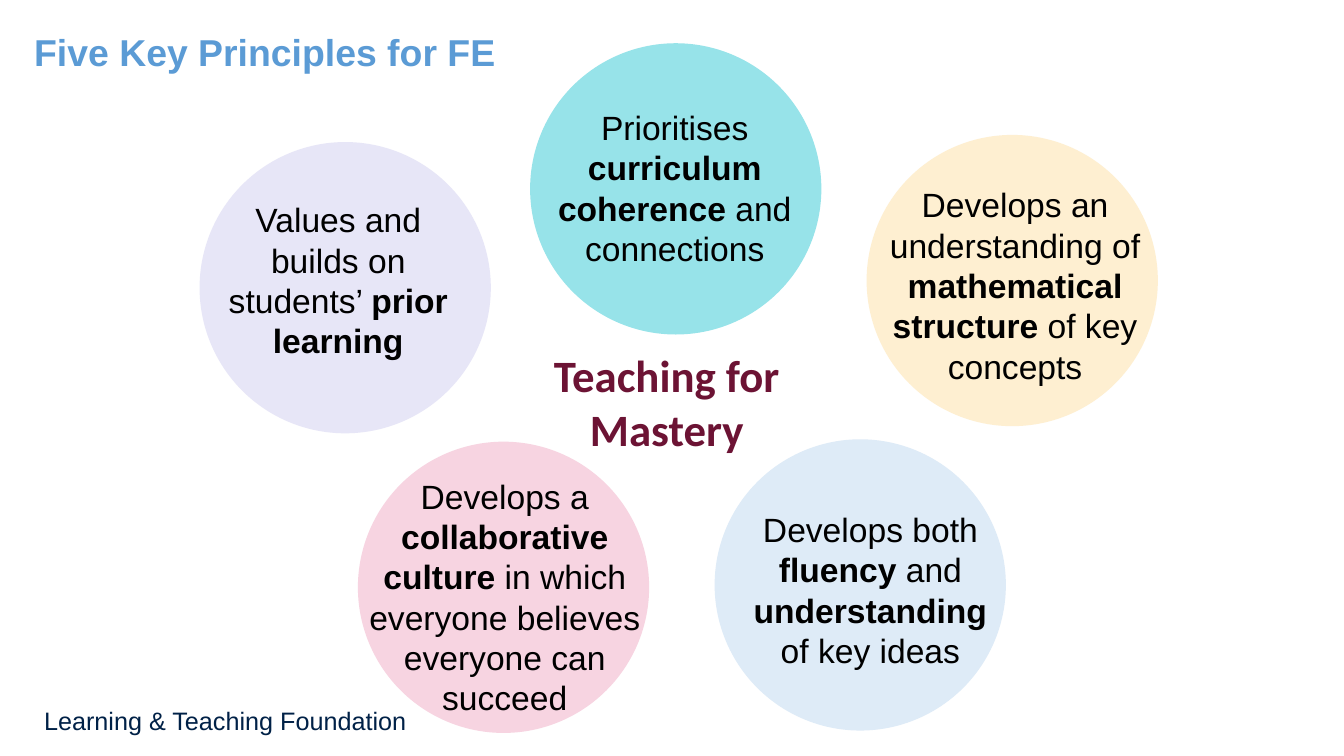
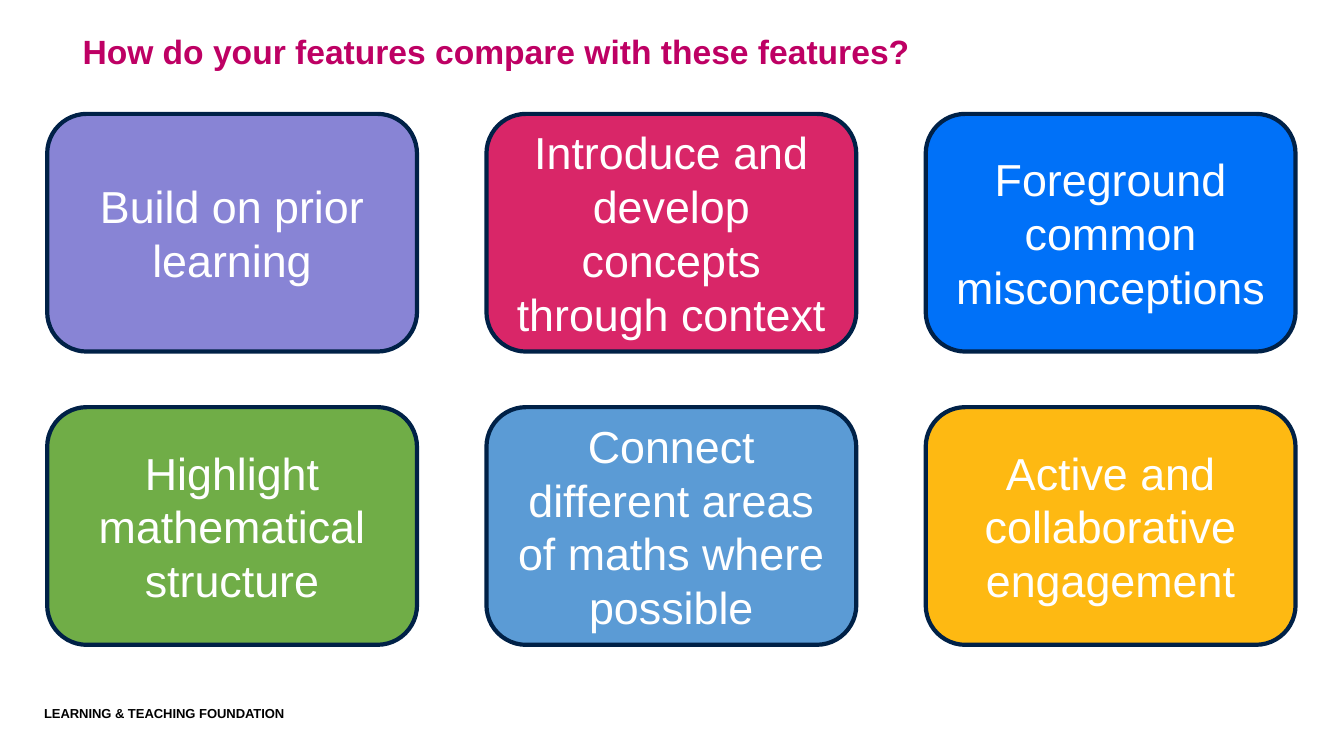
from pptx import Presentation
from pptx.dml.color import RGBColor
from pptx.enum import shapes, text
from pptx.util import Cm, Pt

# Shared colours and fonts
BLACK = RGBColor(0x00, 0x00, 0x00)
WHITE = RGBColor(0xFF, 0xFF, 0xFF)
NAVY = RGBColor(0x00, 0x21, 0x47)
BLUE = RGBColor(0x5B, 0x9B, 0xD5)
MAGENTA = RGBColor(0xBE, 0x00, 0x64)
MAROON = RGBColor(0x6C, 0x13, 0x34)
PALE_PINK = RGBColor(0xF7, 0xD4, 0xE1)
PALE_TEAL = RGBColor(0x97, 0xE3, 0xE9)
PALE_BLUE = RGBColor(0xDE, 0xEB, 0xF7)
PALE_YELLOW = RGBColor(0xFE, 0xEF, 0xD1)
PALE_LILAC = RGBColor(0xE7, 0xE6, 0xF7)
LILAC = RGBColor(0x88, 0x84, 0xD5)
RASPBERRY = RGBColor(0xD9, 0x26, 0x68)
BRIGHT_BLUE = RGBColor(0x00, 0x71, 0xF8)
GREEN = RGBColor(0x70, 0xAD, 0x47)
AMBER = RGBColor(0xFE, 0xB9, 0x12)
FONT = "Arial"
HEADING_FONT = "Calibri"
FOOTER = "Learning & Teaching Foundation"

# Principles: circle colour, circle (left, top), text box (left, top, width,
# height), wording with the bold parts between asterisks
DIAMETER = 7.34
PRINCIPLES = [
    (PALE_PINK, (9.02, 11.13), (9.02, 11.86, 7.4, 4.67),
     "Develops a *collaborative culture* in which everyone believes "
     "everyone can succeed"),
    (PALE_TEAL, (13.36, 1.09), (13.46, 2.57, 7.09, 3.3),
     "Prioritises *curriculum coherence* and connections"),
    (PALE_BLUE, (18.01, 11.07), (18.72, 12.7, 6.43, 4.57),
     "Develops both *fluency* and *understanding* of key ideas"),
    (PALE_YELLOW, (21.84, 3.4), (21.67, 4.52, 7.82, 4.75),
     "Develops an understanding of *mathematical structure* of key concepts"),
    (PALE_LILAC, (5.03, 3.58), (5.31, 4.9, 6.43, 3.53),
     "Values and builds on students’ *prior learning*"),
]

# Feature cards, row by row
CARD_COLUMNS = 3
CARD_LEFT, CARD_TOP = 1.19, 2.87
CARD_WIDTH, CARD_HEIGHT = 9.32, 5.99
CARD_STEP_X, CARD_STEP_Y = 11.07, 7.39
FEATURES = [
    (LILAC, "Build on prior learning"),
    (RASPBERRY, "Introduce and develop concepts through context"),
    (BRIGHT_BLUE, "Foreground common misconceptions"),
    (GREEN, "Highlight mathematical structure"),
    (BLUE, "Connect different areas of maths where possible"),
    (AMBER, "Active and collaborative engagement"),
]


def style(font, size, color, bold=False, name=FONT):
    font.name, font.size, font.bold = name, Pt(size), bold
    font.color.rgb = color


def add_rich_text(p, wording, size, color, name=FONT):
    """Fill a paragraph; parts between asterisks become bold."""
    for i, part in enumerate(wording.split("*")):
        if part:
            r = p.add_run()
            r.text = part
            style(r.font, size, color, i % 2 == 1, name)


def add_text(s, box, wording, size, color, name=FONT,
             align=text.PP_ALIGN.CENTER):
    tf = s.shapes.add_textbox(*map(Cm, box)).text_frame
    tf.word_wrap = True
    p = tf.paragraphs[0]
    p.alignment = align
    add_rich_text(p, wording, size, color, name)


def add_filled_shape(s, kind, box, fill):
    sp = s.shapes.add_shape(kind, *map(Cm, box))
    sp.shadow.inherit = False
    sp.fill.solid()
    sp.fill.fore_color.rgb = fill
    sp.line.fill.background()
    return sp


def add_card(s, box, fill, wording):
    sp = add_filled_shape(s, shapes.MSO_SHAPE.ROUNDED_RECTANGLE, box, fill)
    sp.line.color.rgb = NAVY
    sp.line.width = Pt(3)
    tf = sp.text_frame
    tf.word_wrap = True
    tf.vertical_anchor = text.MSO_ANCHOR.MIDDLE
    p = tf.paragraphs[0]
    p.alignment = text.PP_ALIGN.CENTER
    add_rich_text(p, wording, 32, WHITE)


def set_title(s, wording, left, top, size, color):
    sp = s.shapes.title
    sp.left, sp.top, sp.width, sp.height = map(Cm, (left, top, 31.24, 2.59))
    tf = sp.text_frame
    tf.text = wording
    tf.auto_size = text.MSO_AUTO_SIZE.NONE
    tf.word_wrap = True
    tf.vertical_anchor = text.MSO_ANCHOR.TOP
    tf.margin_left = tf.margin_right = tf.margin_top = tf.margin_bottom = 0
    p = tf.paragraphs[0]
    p.alignment = text.PP_ALIGN.LEFT
    p.line_spacing = Pt(26.7)
    style(p.runs[0].font, size, color, True)


def add_footer(s, wording, size, color):
    add_text(s, (0.86, 17.65, 28.47, 1.02), wording, size, color,
             align=text.PP_ALIGN.LEFT)


def add_principles_slide(prs):
    s = prs.slides.add_slide(prs.slide_layouts[5])
    add_footer(s, FOOTER, 18, NAVY)
    set_title(s, "Five Key Principles for FE", 0.86, 0.91, 26.7, BLUE)
    add_text(s, (13.59, 8.64, 6.43, 2.69), "*Teaching for Mastery*", 32,
             MAROON, HEADING_FONT)
    for fill, corner, box, wording in PRINCIPLES:
        add_filled_shape(s, shapes.MSO_SHAPE.OVAL,
                         (*corner, DIAMETER, DIAMETER), fill)
        add_text(s, box, wording, 24, BLACK)


def add_features_slide(prs):
    s = prs.slides.add_slide(prs.slide_layouts[5])
    add_footer(s, f"*{FOOTER.upper()}*", 9.3, BLACK)
    set_title(s, "How do your features compare with these features?",
              2.08, 0.84, 24, MAGENTA)
    for i, (fill, wording) in enumerate(FEATURES):
        row, column = divmod(i, CARD_COLUMNS)
        box = (CARD_LEFT + column * CARD_STEP_X, CARD_TOP + row * CARD_STEP_Y,
               CARD_WIDTH, CARD_HEIGHT)
        add_card(s, box, fill, wording)


def main():
    prs = Presentation()
    prs.slide_width, prs.slide_height = Cm(33.87), Cm(19.05)
    add_principles_slide(prs)
    add_features_slide(prs)
    prs.save("out.pptx")


if __name__ == "__main__":
    main()
